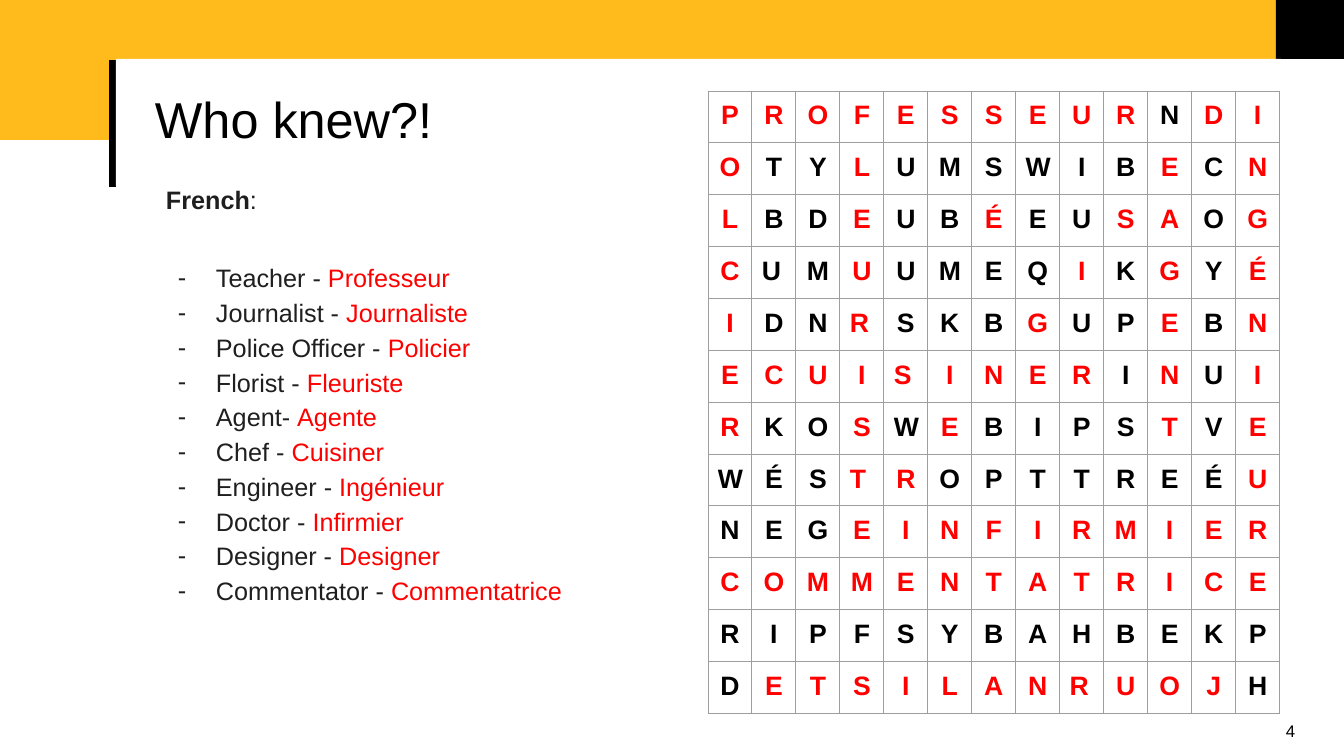
from lxml import etree
from pptx import Presentation
from pptx import util as u
from pptx.dml.color import RGBColor
from pptx.enum import shapes, text
from pptx.oxml import ns

TITLE = "Who knew?!"
PAGE_NUMBER = "4"
LANGUAGE = "French"
JOBS = [
    ("Teacher - ", "Professeur"),
    ("Journalist - ", "Journaliste"),
    ("Police Officer - ", "Policier"),
    ("Florist - ", "Fleuriste"),
    ("Agent- ", "Agente"),
    ("Chef - ", "Cuisiner"),
    ("Engineer - ", "Ingénieur"),
    ("Doctor - ", "Infirmier"),
    ("Designer - ", "Designer"),
    ("Commentator - ", "Commentatrice"),
]
# Capitals belong to a found word (red); small letters are fillers (black).
WORD_SEARCH = [
    "PROFESSEURnDI",
    "OtyLumswibEcN",
    "LbdEubÉeuSAoG",
    "CumUumeqIkGyÉ",
    "IdnRskbGupEbN",
    "ECUISINERiNuI",
    "RkoSwEbipsTvE",
    "wésTRopttreéU",
    "negEINFIRMIER",
    "COMMENTATRICE",
    "ripfsybahbekp",
    "dETSILANRUOJh",
]
LEFT_ALIGNED = {(3, 1), (4, 3), (5, 4), (7, 3), (11, 8)}

COLORS = {"yellow": "FFBB1C", "black": "000000", "white": "FFFFFF",
          "red": "FF0000", "ink": "1F1F1F", "border": "9E9E9E"}
FONT = "Arial"
PX = 914400 / 100.8
COLUMN, ROW, PADDING = 44, 47, 10


def px(*lengths):
    return [u.Emu(round(length * PX)) for length in lengths]


def rgb(name):
    return RGBColor.from_string(COLORS[name])


def add_run(paragraph, words, size, color, bold=False):
    run = paragraph.add_run()
    run.text = words
    font = run.font
    font.name, font.size, font.bold = FONT, u.Pt(size), bold
    font.color.rgb = rgb(color)


def add_rectangle(slide, box, color):
    shape = slide.shapes.add_shape(shapes.MSO_SHAPE.RECTANGLE, *px(*box))
    shape.shadow.inherit = False
    shape.fill.solid()
    shape.fill.fore_color.rgb = rgb(color)
    shape.line.fill.background()
    return shape


def add_text_box(slide, box, vertical_inset):
    frame = slide.shapes.add_textbox(*px(*box)).text_frame
    frame.word_wrap = True
    frame.margin_left, frame.margin_right = px(PADDING, PADDING)
    frame.margin_top, frame.margin_bottom = px(vertical_inset, vertical_inset)
    return frame


def add_color(parent, color):
    etree.SubElement(parent, ns.qn("a:srgbClr"), val=COLORS[color])


def add_dash_bullet(paragraph):
    properties = paragraph._p.get_or_add_pPr()
    margin, indent = px(50, -38)
    properties.set("marL", str(margin))
    properties.set("indent", str(indent))
    add_color(etree.SubElement(properties, ns.qn("a:buClr")), "ink")
    etree.SubElement(properties, ns.qn("a:buFont"), typeface=FONT)
    etree.SubElement(properties, ns.qn("a:buChar"), char="-")


def add_borders(cell):
    properties = cell._tc.get_or_add_tcPr()
    for side in ("lnL", "lnR", "lnT", "lnB"):
        line = etree.SubElement(properties, ns.qn("a:" + side), w=str(u.Pt(0.75)))
        add_color(etree.SubElement(line, ns.qn("a:solidFill")), "border")


def add_frame(slide):
    """Yellow band, black corner and accent line, then the title panel."""
    add_rectangle(slide, (0, 0, 1276, 140), "yellow")
    accent = slide.shapes.add_connector(
        shapes.MSO_CONNECTOR.STRAIGHT, *px(113, 60, 113, 187))
    accent.line.color.rgb = rgb("black")
    accent.line.width = u.Pt(5)
    etree.SubElement(accent._element.spPr, ns.qn("a:effectLst"))
    add_rectangle(slide, (1276, 0, 68, 59), "black")

    frame = add_rectangle(slide, (116, 59, 1165, 127), "white").text_frame
    frame.word_wrap = True
    frame.vertical_anchor = text.MSO_ANCHOR.MIDDLE
    frame.margin_left, frame.margin_right = px(39, PADDING)
    paragraph = frame.paragraphs[0]
    paragraph.alignment = text.PP_ALIGN.LEFT
    paragraph.line_spacing = 0.9
    add_run(paragraph, TITLE, 36, "black")

    number = add_text_box(slide, (1276, 716, 41, 40), 5)
    add_run(number.paragraphs[0], PAGE_NUMBER, 12, "black")


def add_word_search(slide):
    rows, columns = len(WORD_SEARCH), len(WORD_SEARCH[0])
    table = slide.shapes.add_table(
        rows, columns, *px(708, 91, columns * COLUMN, rows * ROW)).table
    table.first_row = table.horz_banding = False
    for column in table.columns:
        column.width = px(COLUMN)[0]
    for row_index, letters in enumerate(WORD_SEARCH):
        table.rows[row_index].height = px(ROW)[0]
        for column_index, letter in enumerate(letters):
            cell = table.cell(row_index, column_index)
            cell.margin_left, cell.margin_right = px(PADDING, PADDING)
            cell.margin_top, cell.margin_bottom = px(PADDING, PADDING)
            add_borders(cell)
            cell.fill.background()
            paragraph = cell.text_frame.paragraphs[0]
            at_left = (row_index, column_index) in LEFT_ALIGNED
            paragraph.alignment = (
                text.PP_ALIGN.LEFT if at_left else text.PP_ALIGN.CENTER)
            color = "red" if letter.isupper() else "black"
            add_run(paragraph, letter.upper(), 19, color, bold=True)


def add_job_list(slide):
    frame = add_text_box(slide, (156, 170, 551, 446), PADDING)
    heading = frame.paragraphs[0]
    heading.line_spacing = 1.15
    add_run(heading, LANGUAGE, 18, "ink", bold=True)
    add_run(heading, ":", 18, "ink")
    for index, (english, french) in enumerate(JOBS):
        paragraph = frame.add_paragraph()
        add_dash_bullet(paragraph)
        paragraph.line_spacing = 1.15
        paragraph.space_before = u.Pt(0 if index else 31)
        add_run(paragraph, english, 18, "ink")
        add_run(paragraph, french, 18, "red")


def main():
    presentation = Presentation()
    presentation.slide_width, presentation.slide_height = px(1344, 756)
    slide = presentation.slides.add_slide(presentation.slide_layouts[6])
    add_frame(slide)
    add_word_search(slide)
    add_job_list(slide)
    presentation.save("out.pptx")


if __name__ == "__main__":
    main()
